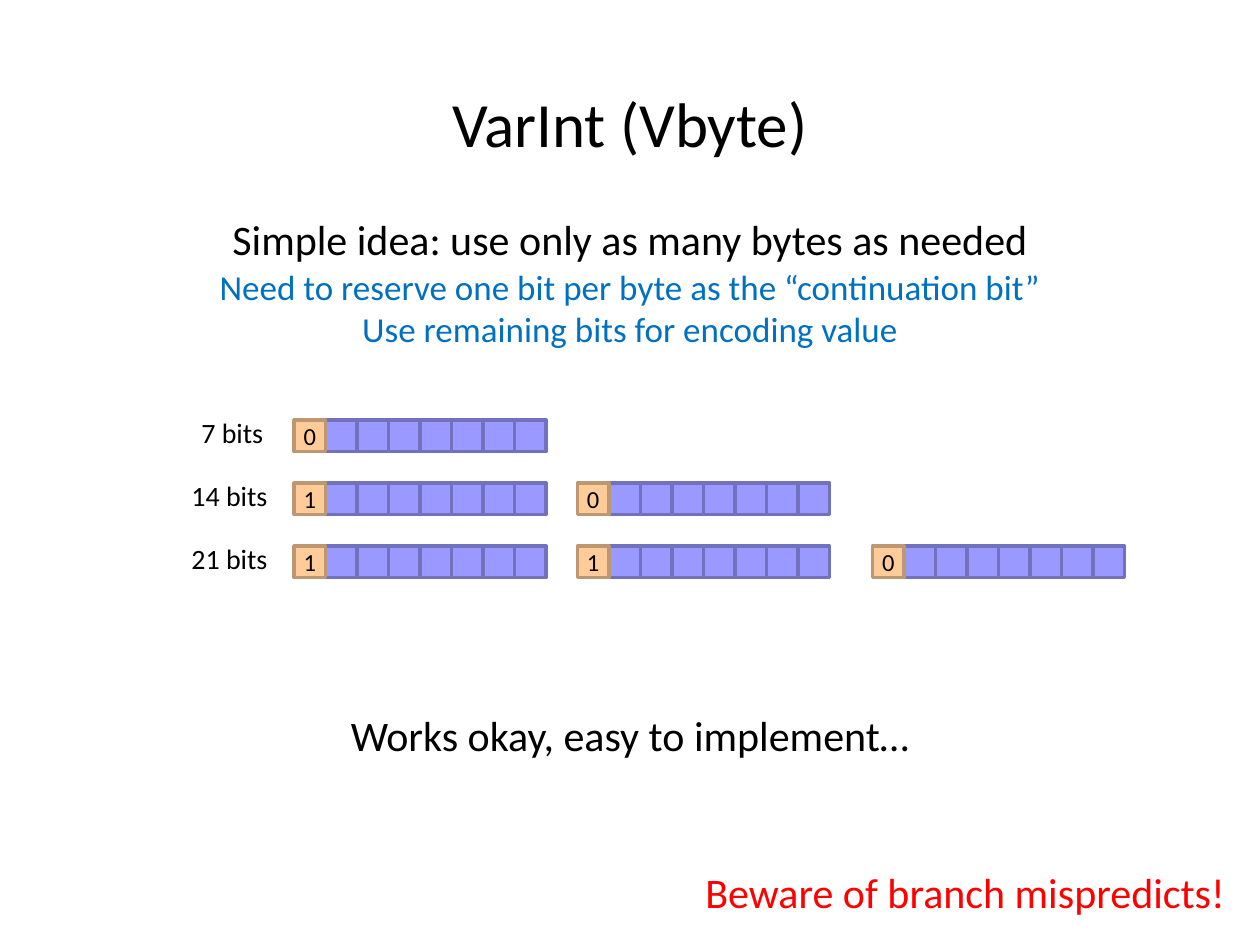
from pptx import Presentation
from pptx import util as u
from pptx.dml.color import RGBColor
from pptx.enum import shapes, text

BLACK = RGBColor(0x00, 0x00, 0x00)
BLUE = RGBColor(0x00, 0x70, 0xC0)
RED = RGBColor(0xFF, 0x00, 0x00)
DATA_FILL = RGBColor(0x99, 0x99, 0xFF)
DATA_LINE = RGBColor(0x71, 0x71, 0xBD)
FLAG_FILL = RGBColor(0xFF, 0xCC, 0x99)
FLAG_LINE = RGBColor(0xBD, 0x97, 0x71)

SLIDE_WIDTH = u.Cm(25.4)
CELL = u.Cm(2.54) // 4
ROW_PITCH = 2 * CELL
FIRST_ROW_TOP = u.Cm(8.47)
BYTE_LEFTS = [u.Cm(5.93), u.Cm(11.64), u.Cm(17.59)]
LABEL_RISE = u.Cm(0.21)


def write(shape, *lines, size, color=BLACK, align=text.PP_ALIGN.CENTER,
          anchor=text.MSO_ANCHOR.TOP, wrap=True, margin=None):
    """Fill a shape with one paragraph per line, all in the same format."""
    frame = shape.text_frame
    frame.word_wrap = wrap
    frame.vertical_anchor = anchor
    if margin is not None:
        frame.margin_left = frame.margin_right = margin
        frame.margin_top = frame.margin_bottom = margin
    frame.text = "\n".join(lines)
    for paragraph in frame.paragraphs:
        paragraph.alignment = align
        paragraph.font.name = "Calibri"
        paragraph.font.size = u.Pt(size)
        paragraph.font.color.rgb = color


def add_bit(group, left, top, fill, line):
    bit = group.shapes.add_shape(shapes.MSO_SHAPE.RECTANGLE, left, top, CELL, CELL)
    bit.shadow.inherit = False
    bit.fill.solid()
    bit.fill.fore_color.rgb = fill
    bit.line.color.rgb = line
    bit.line.width = u.Pt(2)
    return bit


presentation = Presentation()
presentation.slide_width = SLIDE_WIDTH
presentation.slide_height = u.Cm(19.05)
slide = presentation.slides.add_slide(presentation.slide_layouts[5])

title = slide.shapes.title
title.left, title.top = 0, u.Cm(1.52)
title.width, title.height = SLIDE_WIDTH, u.Cm(1.91)
write(title, "VarInt (Vbyte)", size=36, anchor=text.MSO_ANCHOR.MIDDLE)

# Each row: label, its left and width, and the continuation bit of every byte
rows = [
    ("7 bits", 3.81, 1.78, "0"),
    ("14 bits", 3.61, 2.06, "10"),
    ("21 bits", 3.61, 2.06, "110"),
]
for row, (label, label_left, label_width, flags) in enumerate(rows):
    top = FIRST_ROW_TOP + row * ROW_PITCH
    for left, flag in zip(BYTE_LEFTS, flags):
        byte = slide.shapes.add_group_shape()
        for column in range(1, 8):
            add_bit(byte, left + column * CELL, top, DATA_FILL, DATA_LINE)
        flag_bit = add_bit(byte, left, top, FLAG_FILL, FLAG_LINE)
        write(flag_bit, flag, size=14, anchor=text.MSO_ANCHOR.MIDDLE, margin=0)
    label_box = slide.shapes.add_textbox(
        u.Cm(label_left), top - LABEL_RISE, u.Cm(label_width), u.Cm(0.94))
    write(label_box, label, size=16, align=text.PP_ALIGN.LEFT, wrap=False)

warning = slide.shapes.add_textbox(u.Cm(13.97), u.Cm(17.35), u.Cm(11.05), u.Cm(1.27))
write(warning, "Beware of branch mispredicts!", size=24, color=RED,
      align=text.PP_ALIGN.LEFT, wrap=False)

statements = [
    (14.17, 1.27, 24, BLACK, ["Works okay, easy to implement…"]),
    (4.17, 1.27, 24, BLACK, ["Simple idea: use only as many bytes as needed"]),
    (5.23, 1.96, 20, BLUE, [
        "Need to reserve one bit per byte as the “continuation bit”",
        "Use remaining bits for encoding value"]),
]
for top, height, size, color, lines in statements:
    box = slide.shapes.add_textbox(0, u.Cm(top), SLIDE_WIDTH, u.Cm(height))
    write(box, *lines, size=size, color=color)

presentation.save("out.pptx")
